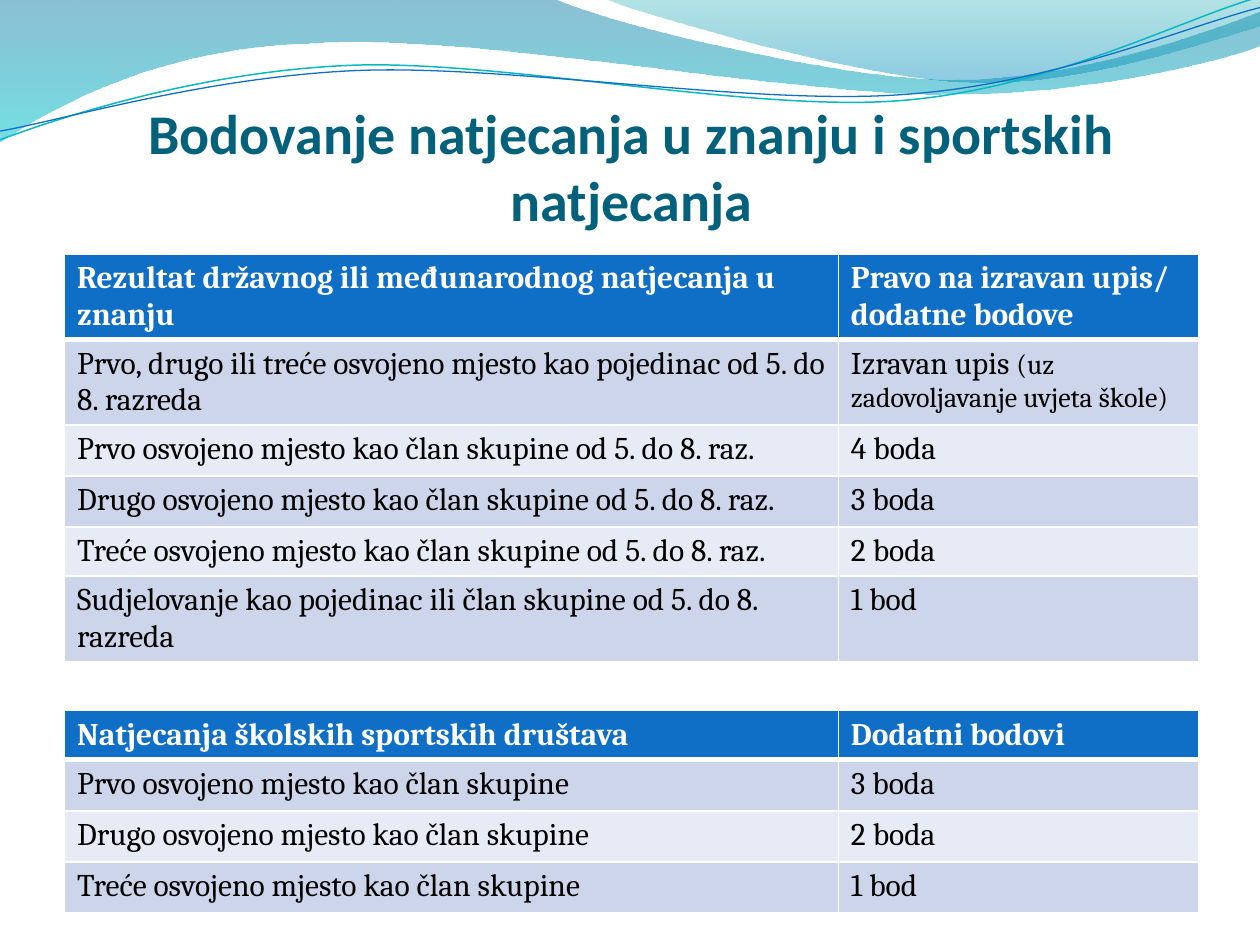
"""Build a slide with two scoring tables under a wave header."""
from lxml import etree
from pptx import Presentation
from pptx.dml.color import RGBColor
from pptx.enum.text import MSO_ANCHOR, MSO_AUTO_SIZE, PP_ALIGN
from pptx.oxml.ns import qn
from pptx.util import Pt

BOTTOM, NO_FIT, CENTER = MSO_ANCHOR.BOTTOM, MSO_AUTO_SIZE.NONE, PP_ALIGN.CENTER

THEME = {
    "title": "04617B", "header": "0F6FC6", "header_text": "FFFFFF",
    "text": "000000", "border": "FFFFFF", "bands": ("CCD5EA", "E7EBF5"),
    "title_font": "Calibri", "table_font": "Cambria",
    "title_size": 32, "table_size": 18, "note_size": 16,
}
TITLE = "Bodovanje natjecanja u znanju i sportskih natjecanja"
LEFT, WIDTH = 36.9, 648
COLUMNS = (442.2, 205.8)
TABLES = [
    {"top": 145.3, "height": 239, "row_heights": (29.2, 29.2, 29.2, 29.2, 27.4, 29.2), "rows": [
        ("Rezultat državnog ili međunarodnog natjecanja u znanju",
         "Pravo na izravan upis/ dodatne bodove"),
        ("Prvo, drugo ili treće osvojeno mjesto kao pojedinac od 5. do 8. razreda",
         ("Izravan upis ", "(uz zadovoljavanje uvjeta škole)")),
        ("Prvo osvojeno mjesto kao član skupine od 5. do 8. raz.", "4 boda"),
        ("Drugo osvojeno mjesto kao član skupine od 5. do 8. raz.", "3 boda"),
        ("Treće osvojeno mjesto kao član skupine od 5. do 8. raz.", "2 boda"),
        ("Sudjelovanje kao pojedinac ili član skupine od 5. do 8. razreda", "1 bod"),
    ]},
    {"top": 406.1, "height": 116.6, "row_heights": (22.3, 29.2, 29.2, 29.2), "rows": [
        ("Natjecanja školskih sportskih društava", "Dodatni bodovi"),
        ("Prvo osvojeno mjesto kao član skupine", "3 boda"),
        ("Drugo osvojeno mjesto kao član skupine", "2 boda"),
        ("Treće osvojeno mjesto kao član skupine", "1 bod"),
    ]},
]
BANDS = [
    {"start": (0, 0), "stops": [("0074A1", 45), ("00C6CF", 55)], "segments": [
        (316.8, -0.7),
        (342.7, 12.2, 478.1, 45.4, 545.8, 45.4),
        (614.2, 45.4, 689.8, 18.7, 720, 6.5),
        (720.7, 25.9),
        (707.8, 31.7, 626.4, 54.7, 537.1, 54),
        (447.8, 54, 275, 20.2, 185, 24.5),
        (92.9, 25.9, 33.1, 59.8, -0.7, 81.4)]},
    {"start": (344.9, -0.7), "stops": [("00A1A9", 30), ("008BBF", 45)], "segments": [
        (366.5, 7.9, 491, 44.6, 553.7, 46.8),
        (616.3, 49.7, 691.9, 23, 720, 15.1),
        (720, 0)]},
]
STRANDS = [
    {"start": (0, 79.9), "color": "0AB8BF", "width": 0.85, "segments": [
        (34.6, 67, 113.8, 41, 199.4, 37.4),
        (284.4, 33.8, 427, 64.1, 513.4, 57.6),
        (599.8, 51.1, 675.4, 10.8, 718.6, -1.4)]},
    {"start": (0, 74.9), "color": "0F6FC6", "width": 0.75, "segments": [
        (33.8, 69.1, 118.1, 43.9, 203.8, 40.3),
        (290.2, 36.7, 429.8, 60.5, 516.2, 54),
        (601.9, 48.2, 677.5, 15.1, 720, 4.3)]},
]


def rgb(value):
    return RGBColor.from_string(value)


def bend(outline, segments):
    """Turn the straight segments that have control points into curves."""
    straights = list(outline._element.spPr.iter(qn("a:lnTo")))
    for straight, segment in zip(straights, segments):
        if len(segment) == 2:
            continue
        curve = etree.Element(qn("a:cubicBezTo"))
        for x, y in zip(segment[::2], segment[1::2]):
            etree.SubElement(curve, qn("a:pt"), x=str(Pt(x) - outline.left),
                             y=str(Pt(y) - outline.top))
        straight.getparent().replace(straight, curve)


def add_wave(slide, wave, closed):
    x, y = wave["start"]
    builder = slide.shapes.build_freeform(Pt(x), Pt(y), scale=1.0)
    ends = [(Pt(segment[-2]), Pt(segment[-1])) for segment in wave["segments"]]
    builder.add_line_segments(ends, close=closed)
    outline = builder.convert_to_shape()
    bend(outline, wave["segments"])
    outline.shadow.inherit = False
    return outline


def add_band(slide, wave):
    band = add_wave(slide, wave, True)
    band.line.fill.background()
    band.fill.gradient()
    band.fill.gradient_angle = 270
    for position, (stop, (color, _)) in enumerate(zip(band.fill.gradient_stops, wave["stops"])):
        stop.position = position
        stop.color.rgb = rgb(color)
    for tint, (_, opacity) in zip(band._element.spPr.iter(qn("a:srgbClr")), wave["stops"]):
        etree.SubElement(tint, qn("a:alpha"), val=str(opacity * 1000))


def add_strand(slide, wave):
    strand = add_wave(slide, wave, False)
    strand.fill.background()
    strand.line.color.rgb = rgb(wave["color"])
    strand.line.width = Pt(wave["width"])


def format_run(run, font, size, color, bold):
    run.font.name, run.font.size, run.font.bold = font, Pt(size), bold
    run.font.color.rgb = rgb(color)


def add_title(slide):
    title = slide.shapes.title
    title.left, title.top, title.width, title.height = Pt(LEFT), Pt(43.2), Pt(WIDTH), Pt(90)
    frame = title.text_frame
    frame.text = TITLE
    frame.auto_size, frame.vertical_anchor = NO_FIT, BOTTOM
    frame.margin_left = frame.margin_right = frame.margin_bottom = 0
    frame.margin_top = Pt(3.6)
    heading = frame.paragraphs[0]
    heading.alignment = CENTER
    format_run(heading.runs[0], THEME["title_font"], THEME["title_size"], THEME["title"], True)
    slide.shapes._spTree.append(title._element)


def set_borders(cell, row):
    widths = {"lnL": 1, "lnR": 1, "lnT": 3 if row == 1 else 1, "lnB": 3 if row == 0 else 1}
    properties = cell._tc.get_or_add_tcPr()
    for side, width in widths.items():
        border = etree.SubElement(properties, qn("a:" + side), w=str(Pt(width)))
        paint = etree.SubElement(border, qn("a:solidFill"))
        etree.SubElement(paint, qn("a:srgbClr"), val=THEME["border"])


def fill_cell(cell, content, row):
    text, *notes = (content,) if isinstance(content, str) else content
    header = row == 0
    set_borders(cell, row)
    cell.fill.solid()
    cell.fill.fore_color.rgb = rgb(THEME["header"] if header else THEME["bands"][(row - 1) % 2])
    entry = cell.text_frame.paragraphs[0]
    entry.text = text
    for note in notes:
        entry.add_run().text = note
    for index, run in enumerate(entry.runs):
        format_run(run, THEME["table_font"], THEME["note_size" if index else "table_size"],
                   THEME["header_text" if header else "text"], header)


def add_scores(slide, scores):
    rows = scores["rows"]
    holder = slide.shapes.add_table(len(rows), len(COLUMNS), Pt(LEFT), Pt(scores["top"]),
                                    Pt(WIDTH), Pt(scores["height"]))
    grid = holder.table
    for column, width in zip(grid.columns, COLUMNS):
        column.width = Pt(width)
    for row, (contents, height) in enumerate(zip(rows, scores["row_heights"])):
        grid.rows[row].height = Pt(height)
        for column, content in enumerate(contents):
            fill_cell(grid.cell(row, column), content, row)
    holder.height = Pt(scores["height"])


def main():
    deck = Presentation()
    deck.slide_width, deck.slide_height = Pt(720), Pt(540)
    slide = deck.slides.add_slide(deck.slide_layouts[5])
    for wave in BANDS:
        add_band(slide, wave)
    for wave in STRANDS:
        add_strand(slide, wave)
    add_title(slide)
    for scores in TABLES:
        add_scores(slide, scores)
    deck.save("out.pptx")


if __name__ == "__main__":
    main()
